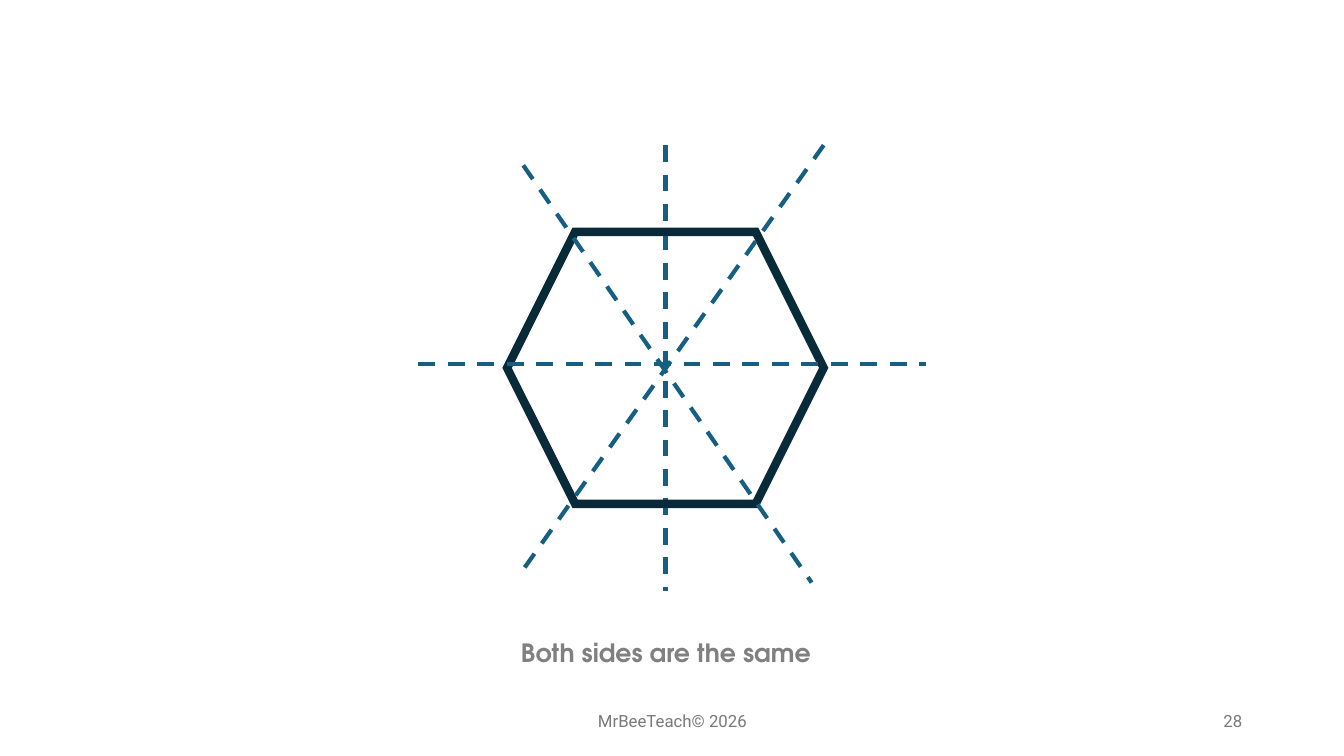
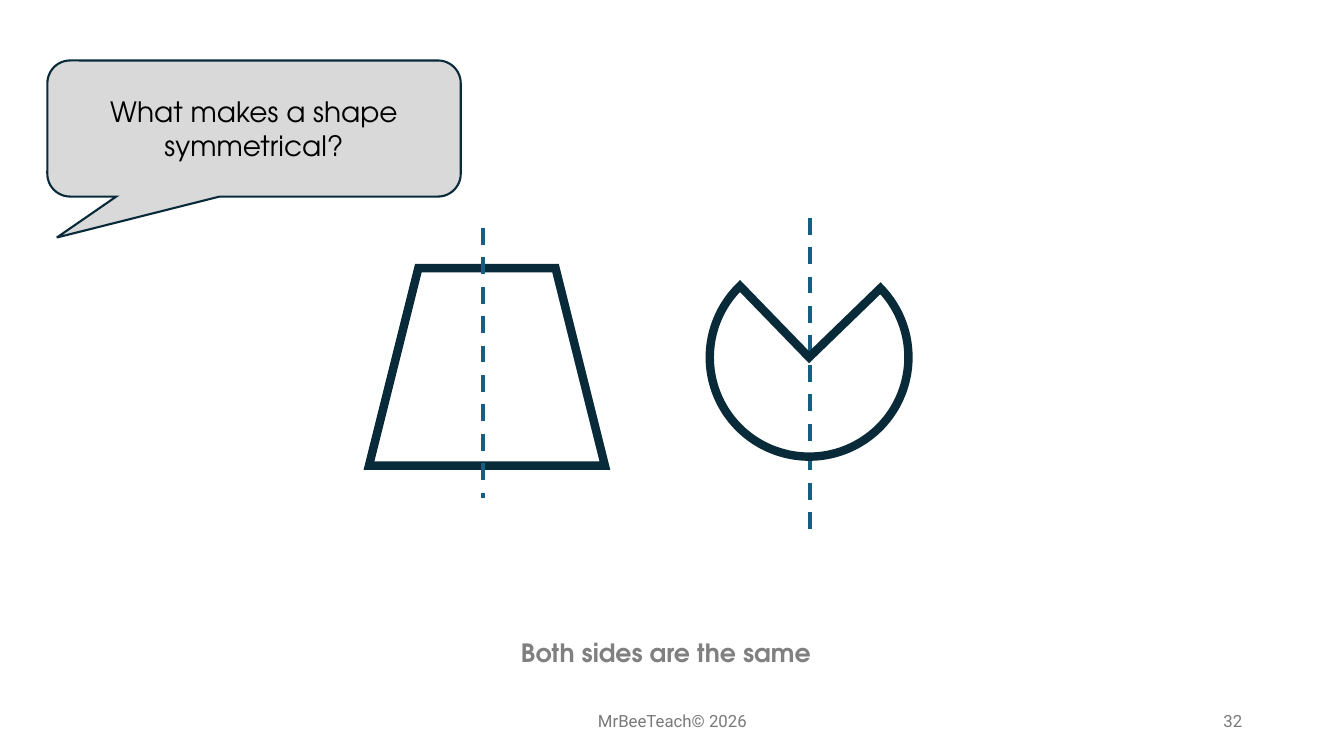
from dataclasses import dataclass

from lxml import etree
from pptx import Presentation
from pptx.dml.color import RGBColor
from pptx.enum import dml, shapes, text
from pptx.oxml import ns
from pptx.util import Inches, Pt


@dataclass(frozen=True)
class Theme:
    """Colours, fonts and sizes shared by the slides."""
    outline: str = "092A39"
    axis: str = "156082"
    bubble: str = "D9D9D9"
    ink: str = "000000"
    caption: str = "808080"
    footer: str = "797979"
    body_font: str = "TeX Gyre Adventor"
    footer_font: str = "Roboto"
    question_size: int = 20
    caption_size: int = 18
    footer_size: int = 12
    outline_width: float = 6
    axis_width: float = 3
    bubble_width: float = 1.5


THEME = Theme()
KIND = shapes.MSO_SHAPE
ALIGN = text.PP_ALIGN
ANCHOR = text.MSO_ANCHOR


def rgb(value):
    """Return a colour object for a hex value."""
    return RGBColor.from_string(value)


def write(sp, words, font, size, color, align=ALIGN.CENTER,
          anchor=ANCHOR.MIDDLE, bold=False):
    """Fill a shape with one formatted paragraph."""
    tf = sp.text_frame
    tf.word_wrap = True
    tf.vertical_anchor = anchor
    p = tf.paragraphs[0]
    p.text = words
    p.alignment = align
    p.font.name = font
    p.font.size = Pt(size)
    p.font.bold = bold
    p.font.color.rgb = rgb(color)


def add_label(s, box, words, *style, **options):
    """Add a text box in the given box."""
    sp = s.shapes.add_textbox(*map(Inches, box))
    write(sp, words, *style, **options)
    return sp


def add_figure(s, kind, box, width=THEME.outline_width, fill=None, rotation=0):
    """Add a preset shape with a sharp-cornered outline."""
    sp = s.shapes.add_shape(kind, *map(Inches, box))
    sp.shadow.inherit = False
    sp.rotation = rotation
    if fill:
        sp.fill.solid()
        sp.fill.fore_color.rgb = rgb(fill)
    else:
        sp.fill.background()
    sp.line.color.rgb = rgb(THEME.outline)
    sp.line.width = Pt(width)
    ln = sp.line._get_or_add_ln()
    etree.SubElement(ln, ns.qn("a:miter")).set("lim", "800000")
    return sp


def add_axis(s, left, top, x1, y1, x2, y2):
    """Add a dashed line of symmetry, measured from the region's corner."""
    ends = (left + x1, top + y1, left + x2, top + y2)
    cx = s.shapes.add_connector(shapes.MSO_CONNECTOR.STRAIGHT, *map(Inches, ends))
    cx.line.color.rgb = rgb(THEME.axis)
    cx.line.width = Pt(THEME.axis_width)
    cx.line.dash_style = dml.MSO_LINE.DASH
    etree.SubElement(cx._element.spPr, ns.qn("a:effectLst"))


def add_hexagon(s, left, top, width, height):
    """Draw a hexagon with its four lines of symmetry."""
    middle = 2.45
    add_axis(s, left, top, middle, 0, middle, height)
    add_figure(s, KIND.HEXAGON, (left + 0.88, top + 0.86, 3.14, 2.7))
    for axis in ((0, 2.17, width, 2.17),
                 (1.04, 0.2, 3.9, 4.34),
                 (4.02, 0, 1.04, 4.21)):
        add_axis(s, left, top, *axis)


def add_pie(s, left, top, width, height):
    """Draw an open pie with its upright line of symmetry."""
    middle = 0.99
    add_axis(s, left, top, middle, 0, middle, height)
    add_figure(s, KIND.PIE, (left, top + 0.4, width, width), rotation=315.9)


def add_trapezoid(s, left, top, width, height):
    """Draw a trapezoid with its upright line of symmetry."""
    middle = 1.13
    add_figure(s, KIND.TRAPEZOID, (left, top + 0.4, width, 1.96))
    add_axis(s, left, top, middle, 0, middle, height)


def add_question(s, box, words):
    """Draw a speech bubble holding a question."""
    sp = add_figure(s, KIND.ROUNDED_RECTANGULAR_CALLOUT, box,
                    THEME.bubble_width, THEME.bubble)
    for i, value in enumerate((-0.477, 0.801, 0.167)):
        sp.adjustments[i] = value
    write(sp, words, THEME.body_font, THEME.question_size, THEME.ink)


def add_symmetry_slide(prs, number):
    """Add a slide with the shared footer, number and caption."""
    s = prs.slides.add_slide(prs.slide_layouts[6])
    footer = (THEME.footer_font, THEME.footer_size, THEME.footer)
    add_label(s, (4.42, 6.95, 4.5, 0.4), "MrBeeTeach© 2026", *footer)
    add_label(s, (9.42, 6.95, 3, 0.4), str(number), *footer, align=ALIGN.RIGHT)
    sp = add_label(s, (3.27, 6.27, 6.67, 0.4), "Both sides are the same",
                   THEME.body_font, THEME.caption_size, THEME.caption,
                   anchor=ANCHOR.TOP, bold=True)
    sp.text_frame.auto_size = text.MSO_AUTO_SIZE.SHAPE_TO_FIT_TEXT
    return s


def main():
    """Build and save the presentation."""
    prs = Presentation()
    prs.slide_width = Inches(13.33)
    prs.slide_height = Inches(7.5)

    s = add_symmetry_slide(prs, 28)
    add_hexagon(s, 4.15, 1.44, 5.03, 4.42)

    s = add_symmetry_slide(prs, 32)
    add_pie(s, 7.04, 2.16, 1.97, 3.2)
    add_trapezoid(s, 3.66, 2.26, 2.34, 2.68)
    add_question(s, (0.47, 0.6, 4.1, 1.35), "What makes a shape symmetrical?")

    prs.save("out.pptx")


if __name__ == "__main__":
    main()
